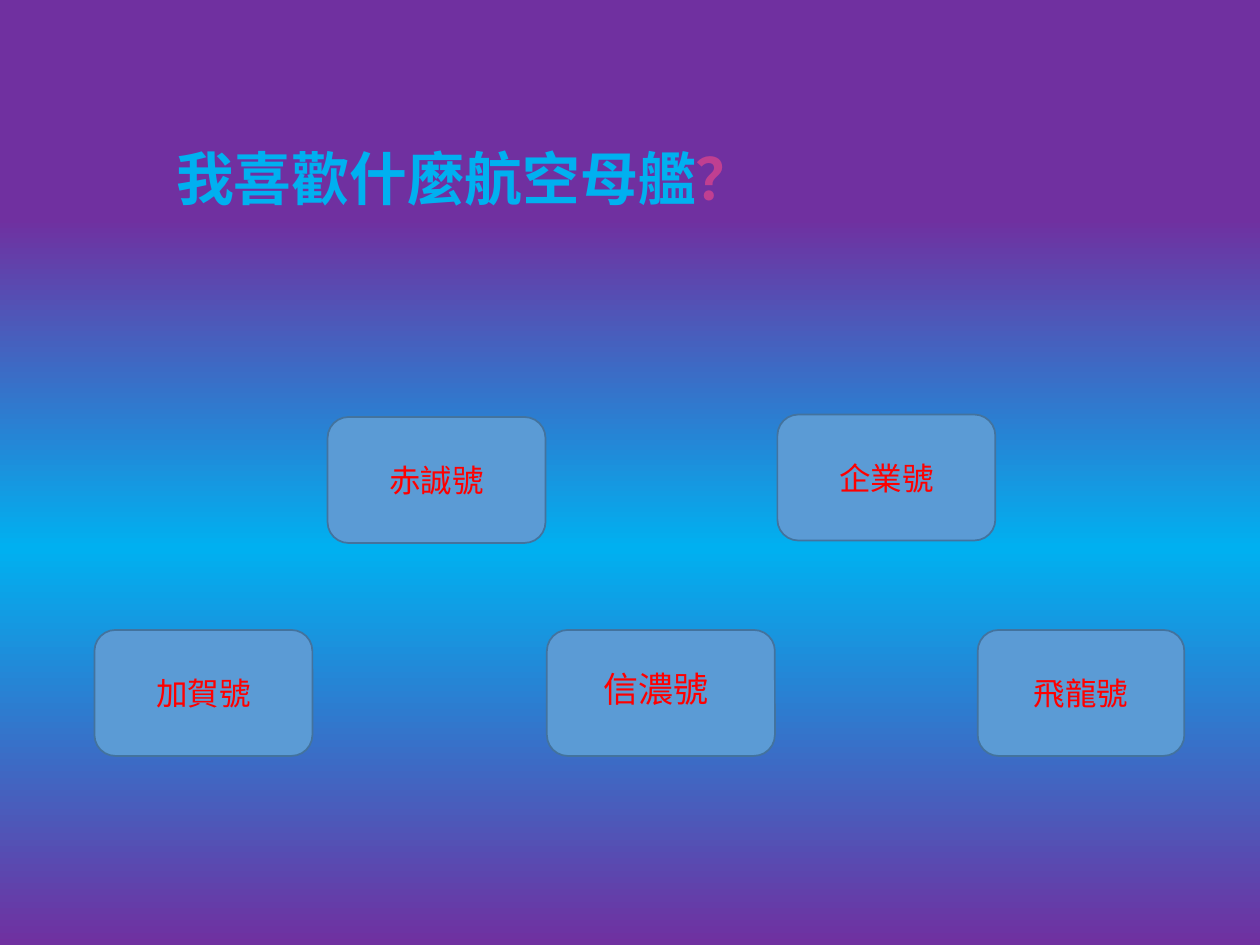
"""Build a slide that asks which aircraft carrier I like, with five name buttons."""
import copy

import pptx
import pptx.dml.color
import pptx.enum.shapes
import pptx.enum.text
import pptx.oxml.ns
import pptx.util

Inches = pptx.util.Inches
COLORS = {
    "purple": "7030A0",
    "sky": "00B0F0",
    "pink": "C03F91",
    "button": "5B9BD5",
    "outline": "43739E",
    "name": "FF0000",
}


def color(name):
    return pptx.dml.color.RGBColor.from_string(COLORS[name])


def add_span(para, text, *, size=18, fill="name", bold=False):
    span = para.add_run()
    span.text = text
    span.font.name = "Calibri"
    span.font.size = pptx.util.Pt(size)
    span.font.bold = bold
    span.font.color.rgb = color(fill)


deck = pptx.Presentation()
deck.slide_width, deck.slide_height = Inches(10), Inches(7.5)
page = deck.slides.add_slide(deck.slide_layouts[6])

background = page.background.fill
background.gradient()
background.gradient_angle = 270
stop_list = next(page.element.iter(pptx.oxml.ns.qn("a:gsLst")))
stop_list.append(copy.deepcopy(stop_list[-1]))
gradient = [(0.23, "purple"), (0.58, "sky"), (1, "purple")]
for stop, (position, name) in zip(background.gradient_stops, gradient):
    stop.position = position
    stop.color.rgb = color(name)

title = page.shapes.add_textbox(Inches(1.3), Inches(1.15), Inches(7.44), Inches(1.43))
title.text_frame.word_wrap = True
para = title.text_frame.paragraphs[0]
para.line_spacing = 0.9
add_span(para, "我喜歡什麼航空母艦", size=33, fill="sky", bold=True)
add_span(para, "？", size=33, fill="pink", bold=True)

buttons = [
    ("加賀號", 0.75, 5, 1.73),
    ("飛龍號", 7.76, 5, 1.64),
    ("", 4.34, 5, 1.81),
    ("赤誠號", 2.6, 3.31, 1.73),
    ("企業號", 6.17, 3.29, 1.73),
]
for carrier, left, top, width in buttons:
    button = page.shapes.add_shape(
        pptx.enum.shapes.MSO_SHAPE.ROUNDED_RECTANGLE,
        Inches(left), Inches(top), Inches(width), Inches(1),
    )
    button.shadow.inherit = False
    button.fill.solid()
    button.fill.fore_color.rgb = color("button")
    button.line.color.rgb = color("outline")
    button.line.width = pptx.util.Pt(1)
    if carrier:
        button.text_frame.vertical_anchor = pptx.enum.text.MSO_ANCHOR.MIDDLE
        para = button.text_frame.paragraphs[0]
        para.alignment = pptx.enum.text.PP_ALIGN.CENTER
        add_span(para, carrier)

label = page.shapes.add_textbox(Inches(4.69), Inches(5.25), Inches(1.18), Inches(0.44))
label.text_frame.word_wrap = True
label.text_frame.auto_size = pptx.enum.text.MSO_AUTO_SIZE.SHAPE_TO_FIT_TEXT
add_span(label.text_frame.paragraphs[0], "信濃號", size=20)

deck.save("out.pptx")
